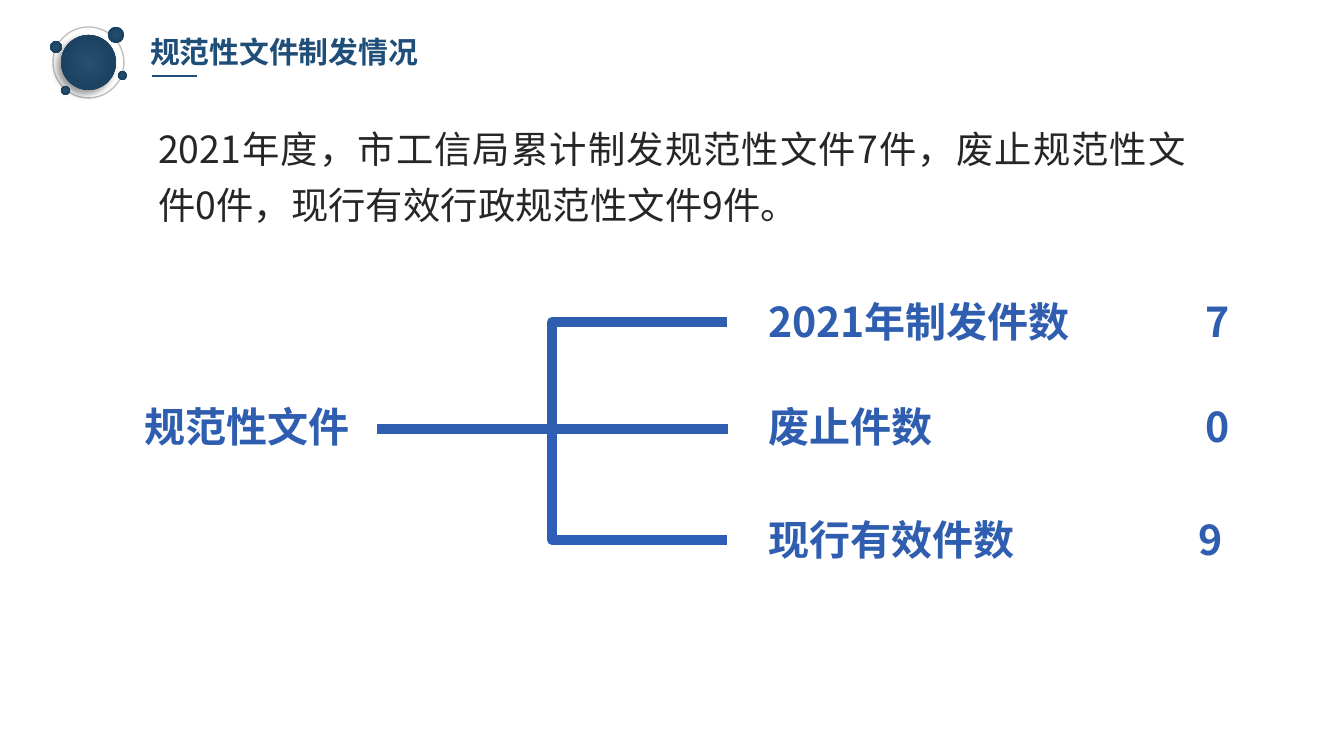
from collections import namedtuple
from dataclasses import dataclass

from lxml import etree
from pptx import Presentation
from pptx.dml.color import RGBColor
from pptx.enum import shapes, text
from pptx.oxml import parse_xml
from pptx.oxml.ns import nsdecls, qn
from pptx.util import Pt

SCALE = 9144000 / 1344  # EMU in one px
Box = namedtuple("Box", "left top width height")


@dataclass(frozen=True)
class Theme:
    navy: str = "1F4E79"
    blue: str = "2F5EB0"
    lower_blue: str = "2F5EB8"
    ink: str = "262626"
    ring: str = "BFBFBF"
    globe_inner: str = "27506E"
    globe_outer: str = "173A5B"
    heading_font: str = "Arial"
    body_font: str = "Noto Sans CJK SC"
    heading_size: int = 16
    body_size: int = 20
    label_size: int = 22


THEME = Theme()


def px(value):
    return round(value * SCALE)


def within(area, left, top, width, height):
    return Box(area.left + left, area.top + top, width, height)


def add_text(page, box, words, size, color, bold=True, face=THEME.body_font, **layout):
    shape = page.shapes.add_textbox(*map(px, box))
    frame = shape.text_frame
    frame.word_wrap = True
    frame.auto_size = text.MSO_AUTO_SIZE.SHAPE_TO_FIT_TEXT
    para = frame.paragraphs[0]
    for name, value in layout.items():
        setattr(para, name, value)
    span = para.add_run()
    span.text = words
    for name, value in {"size": Pt(size), "bold": bold, "name": face}.items():
        setattr(span.font, name, value)
    span.font.color.rgb = RGBColor.from_string(color)
    east_asian = etree.SubElement(span.font._element, qn("a:ea"))
    east_asian.set("typeface", THEME.body_font)


def add_line(page, area, start, end, color, weight, kind=shapes.MSO_CONNECTOR.STRAIGHT):
    ends = [px(base + offset) for point in (start, end)
            for base, offset in zip((area.left, area.top), point)]
    line = page.shapes.add_connector(kind, *ends)
    line.line.color.rgb = RGBColor.from_string(color)
    line.line.width = Pt(weight)
    etree.SubElement(line._element.spPr, qn("a:effectLst"))


def add_circle(page, box):
    circle = page.shapes.add_shape(shapes.MSO_SHAPE.OVAL, *map(px, box))
    circle.shadow.inherit = False
    return circle


def add_ball(page, box):
    ball = add_circle(page, box)
    ball.line.fill.background()
    properties = ball._element.spPr
    properties.find(qn("a:prstGeom")).addnext(parse_xml(
        f'<a:gradFill {nsdecls("a")} rotWithShape="1"><a:gsLst>'
        f'<a:gs pos="0"><a:srgbClr val="{THEME.globe_inner}"/></a:gs>'
        f'<a:gs pos="100000"><a:srgbClr val="{THEME.globe_outer}"/></a:gs></a:gsLst>'
        '<a:path path="circle"><a:fillToRect l="50000" t="50000" r="50000" b="50000"/>'
        '</a:path></a:gradFill>'))
    return ball


def draw_emblem(page, area):
    # Ring
    ring = add_circle(page, within(area, 3, 0, 71, 71))
    ring.fill.background()
    ring.line.color.rgb = RGBColor.from_string(THEME.ring)
    ring.line.width = Pt(0.75)
    # Globe with a soft shadow
    globe = add_ball(page, within(area, 11, 8, 55, 55))
    effects = globe._element.spPr.find(qn("a:effectLst"))
    effects.append(parse_xml(
        f'<a:outerShdw {nsdecls("a")} blurRad="{Pt(4)}" dist="{Pt(3)}" dir="8100000" '
        'algn="tr" rotWithShape="0"><a:srgbClr val="000000"><a:alpha val="40000"/>'
        '</a:srgbClr></a:outerShdw>'))
    # Satellites
    for left, top, size in ((58, 0, 16), (0, 14, 12), (11, 59, 9), (68, 44, 9)):
        add_ball(page, within(area, left, top, size, size))


def draw_heading(page, area):
    add_text(page, area, "规范性文件制发情况", THEME.heading_size, THEME.navy,
             face=THEME.heading_font)
    add_line(page, area, (15, 49), (60, 49), THEME.navy, 1.5)


def draw_summary(page, area):
    add_text(page, area,
             "2021年度，市工信局累计制发规范性文件7件，废止规范性文件0件，现行有效行政规范性文件9件。",
             THEME.body_size, THEME.ink, bold=False, alignment=text.PP_ALIGN.JUSTIFY,
             line_spacing=Pt(30), space_after=Pt(8))


def draw_tree(page, area):
    label = {"size": THEME.label_size, "color": THEME.blue}
    # Root
    add_text(page, within(area, 0, 105, 363, 63), "规范性文件",
             alignment=text.PP_ALIGN.RIGHT, **label)
    # Branch lines
    elbow = shapes.MSO_CONNECTOR.ELBOW
    add_line(page, area, (377, 139), (727, 250), THEME.lower_blue, 5, elbow)
    add_line(page, area, (377, 139), (727, 32), THEME.blue, 5, elbow)
    add_line(page, area, (550, 139), (728, 139), THEME.blue, 5)
    # Leaves: wording, count, top, left of the count
    leaves = (("2021年制发件数", "7", 0, 1192),
              ("废止件数", "0", 105, 1192),
              ("现行有效件数", "9", 218, 1185))
    for words, count, top, count_left in leaves:
        add_text(page, within(area, 755, top, 334, 63), words, **label)
        add_text(page, within(area, count_left, top, 72, 63), count, **label)


def main():
    deck = Presentation()
    deck.slide_width, deck.slide_height = px(1344), px(756)
    page = deck.slides.add_slide(deck.slide_layouts[6])
    draw_emblem(page, Box(50, 27, 77, 71))
    draw_heading(page, Box(137, 27, 327, 50))
    draw_summary(page, Box(145, 108, 1054, 126))
    draw_tree(page, Box(0, 290, 1344, 281))
    deck.save("out.pptx")


if __name__ == "__main__":
    main()
